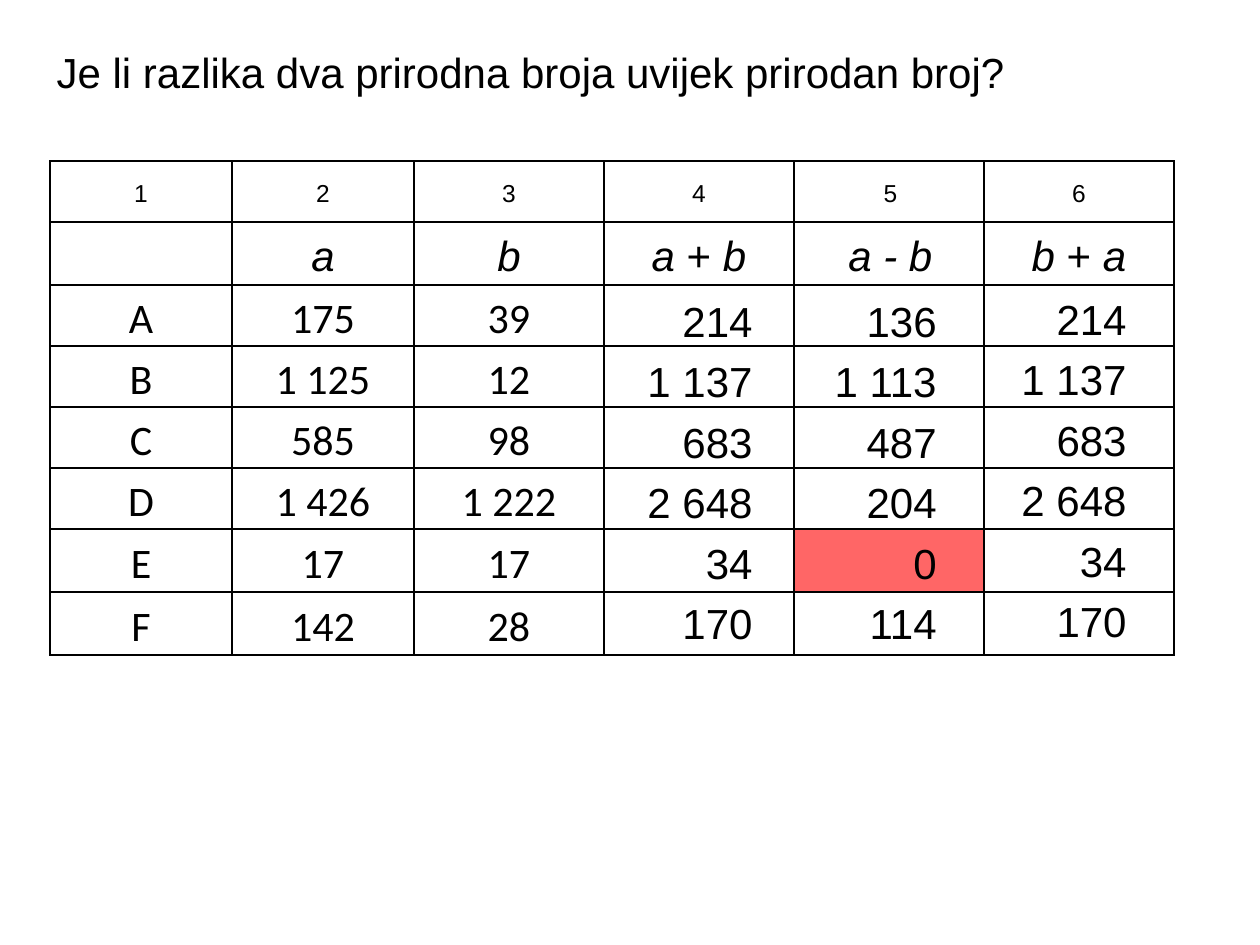
import dataclasses

import pptx
import pptx.dml.color
import pptx.enum.text
import pptx.oxml
import pptx.oxml.ns
import pptx.util

ALIGN = pptx.enum.text.PP_ALIGN
ANCHOR = pptx.enum.text.MSO_ANCHOR
FIT = pptx.enum.text.MSO_AUTO_SIZE
EMU_PER_PX = 914400 / 126


@dataclasses.dataclass(frozen=True)
class Theme:
    """Colours, fonts and type sizes of the slide."""
    ink: str = "000000"
    mark: str = "FF0000"
    mark_alpha: int = 60000
    sans: str = "Arial"
    table: str = "Calibri"
    large: int = 24
    small: int = 14


THEME = Theme()
COLUMN_WIDTHS = [182, 182, 190, 190, 190, 190]
ROW_HEIGHTS = [61, 63, 61, 61, 61, 61, 63, 63]
NUMBERS = ["1", "2", "3", "4", "5", "6"]
FORMULAS = ["", "a", "b", "a + b", "a - b", "b + a"]
PAIRS = [
    ["A", "175", "39"],
    ["B", "1 125", "12"],
    ["C", "585", "98"],
    ["D", "1 426", "1 222"],
    ["E", "17", "17"],
    ["F", "142", "28"],
]
SUMS = ["214", "1 137", "683", "2 648", "34", "170"]
DIFFERENCES = ["136", "1 113", "487", "204", "0", "114"]
ZERO_CELL = (6, 4)
HANGING_COLUMN = 4


def px(length):
    """Turn pixels into EMU."""
    return pptx.util.Emu(round(length * EMU_PER_PX))


def apply_format(target, values):
    """Set every attribute named in a dict of format values."""
    for name, value in values.items():
        setattr(target, name, value)


def add_span(para, text, font=THEME.sans, size=THEME.large, italic=False):
    """Add one formatted run to a paragraph."""
    span = para.add_run()
    span.text = text
    apply_format(span.font, {"name": font, "size": pptx.util.Pt(size),
                             "italic": italic, "bold": False})
    span.font.color.rgb = pptx.dml.color.RGBColor.from_string(THEME.ink)


def add_title(page, box, text):
    """Place the question in the title placeholder."""
    title = page.shapes.title
    apply_format(title, dict(zip(("left", "top", "width", "height"), map(px, box))))
    apply_format(title.text_frame, {"word_wrap": True, "auto_size": FIT.NONE,
                                    "vertical_anchor": ANCHOR.TOP})
    para = title.text_frame.paragraphs[0]
    apply_format(para, {"alignment": ALIGN.LEFT, "line_spacing": 1.0})
    add_span(para, text)


def style_cell(cell):
    """Give a cell thin borders, tight margins and no fill."""
    properties = cell._tc.get_or_add_tcPr()
    for side in ("lnL", "lnR", "lnT", "lnB"):
        properties.append(pptx.oxml.parse_xml(
            f'<a:{side} {pptx.oxml.ns.nsdecls("a")} w="12700"><a:solidFill>'
            f'<a:srgbClr val="{THEME.ink}"/></a:solidFill></a:{side}>'))
    apply_format(cell, {"margin_left": px(9), "margin_right": px(9),
                        "margin_top": 0, "margin_bottom": 0,
                        "vertical_anchor": ANCHOR.MIDDLE})
    cell.fill.background()


def mark_cell(cell):
    """Fill a cell with the translucent marking colour."""
    cell.fill.solid()
    cell.fill.fore_color.rgb = pptx.dml.color.RGBColor.from_string(THEME.mark)
    colour = cell._tc.tcPr.find(
        f'{pptx.oxml.ns.qn("a:solidFill")}/{pptx.oxml.ns.qn("a:srgbClr")}')
    colour.append(pptx.oxml.parse_xml(
        f'<a:alpha {pptx.oxml.ns.nsdecls("a")} val="{THEME.mark_alpha}"/>'))


def write_cell(cell, row, column, text):
    """Write a centred number, formula or table value."""
    para = cell.text_frame.paragraphs[0]
    apply_format(para, {"alignment": ALIGN.CENTER, "line_spacing": 1.15})
    if column == HANGING_COLUMN:
        properties = para._p.get_or_add_pPr()
        properties.set("marL", str(px(32)))
        properties.set("indent", str(px(-29)))
    if row == 0:
        add_span(para, text, size=THEME.small)
    elif row > 1:
        add_span(para, text, font=THEME.table)
    elif " + " in text:
        first, second = text.split(" + ")
        for part, italic in ((first, True), (" + ", False), (second, True)):
            add_span(para, part, italic=italic)
    else:
        add_span(para, text, italic=True)


def add_number_table(page, box):
    """Build the table of number pairs and formulas."""
    table = page.shapes.add_table(
        len(ROW_HEIGHTS), len(COLUMN_WIDTHS), *map(px, box)).table
    apply_format(table, {"first_row": False, "horz_banding": False})
    for column, width in zip(table.columns, COLUMN_WIDTHS):
        column.width = px(width)
    for row, height in zip(table.rows, ROW_HEIGHTS):
        row.height = px(height)
    for cell in table.iter_cells():
        style_cell(cell)
    for row, texts in enumerate([NUMBERS, FORMULAS, *PAIRS]):
        for column, text in enumerate(texts):
            if text:
                write_cell(table.cell(row, column), row, column, text)
    mark_cell(table.cell(*ZERO_CELL))


def add_results(page, box, results):
    """Stack right-aligned results evenly down the given box."""
    left, top, width, height = box
    pitch = height / len(results)
    for index, result in enumerate(results):
        answer = page.shapes.add_textbox(
            px(left), px(top + index * pitch), px(width), px(63))
        apply_format(answer.text_frame, {"word_wrap": True,
                                         "auto_size": FIT.SHAPE_TO_FIT_TEXT})
        para = answer.text_frame.paragraphs[0]
        para.alignment = ALIGN.RIGHT
        add_span(para, result)


def main():
    """Build and save the deck."""
    deck = pptx.Presentation()
    apply_format(deck, {"slide_width": px(1260), "slide_height": px(945)})
    page = deck.slides.add_slide(deck.slide_layouts[5])
    add_title(page, (44, 40, 1048, 63),
              "Je li razlika dva prirodna broja uvijek prirodan broj?")
    add_number_table(page, (50, 161, sum(COLUMN_WIDTHS), sum(ROW_HEIGHTS)))
    add_results(page, (626, 289, 139, 363), SUMS)
    add_results(page, (805, 289, 144, 363), DIFFERENCES)
    add_results(page, (1000, 287, 139, 363), SUMS)
    deck.save("out.pptx")


if __name__ == "__main__":
    main()
